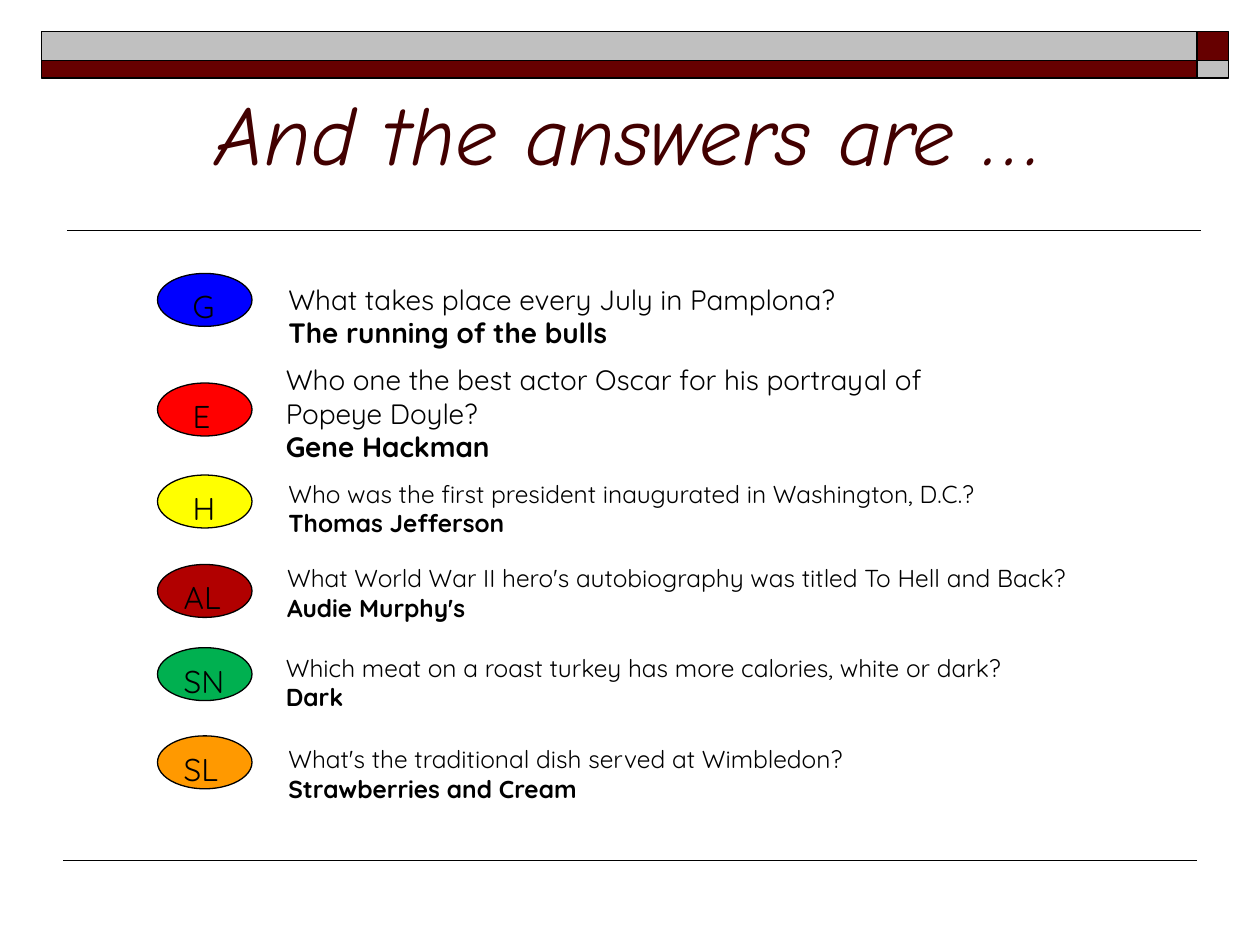
from typing import NamedTuple

from lxml.etree import SubElement
from pptx import Presentation
from pptx.dml.color import RGBColor
from pptx.enum.shapes import MSO_CONNECTOR as Link, MSO_SHAPE as Kind
from pptx.enum.text import MSO_ANCHOR as Anchor, MSO_AUTO_SIZE as Fit, PP_ALIGN as Align
from pptx.oxml.ns import qn
from pptx.util import Inches, Pt

BLACK = RGBColor(0, 0, 0)
WINE = RGBColor(0x66, 0, 0)
GRAY = RGBColor(0xC0, 0xC0, 0xC0)
DARK = RGBColor(0x42, 0, 0)
BLUE = RGBColor(0, 0, 0xFF)
RED = RGBColor(0xFF, 0, 0)
YELLOW = RGBColor(0xFF, 0xFF, 0)
BRICK = RGBColor(0xB1, 0, 0)
GREEN = RGBColor(0, 0xB0, 0x50)
ORANGE = RGBColor(0xFF, 0x99, 0)
FONT = "Quicksand"


class Box(NamedTuple):
    left: float
    top: float
    width: float
    height: float


class Entry(NamedTuple):
    tag: str
    fill: RGBColor
    top: float
    box: Box
    size: int
    ask: str
    answer: str


BARS = [
    (Box(9.5, 0.25, 0.25, 0.23), WINE),
    (Box(0.33, 0.25, 9.17, 0.23), GRAY),
    (Box(0.33, 0.48, 9.17, 0.14), WINE),
    (Box(9.5, 0.48, 0.25, 0.14), GRAY),
]

ENTRIES = [
    Entry("G", BLUE, 2.17, Box(2.19, 2.19, 6.17, 0.64), 16,
          "What takes place every July in Pamplona?", "The running of the bulls"),
    Entry("E", RED, 3.04, Box(2.17, 2.83, 5.58, 0.91), 16,
          "Who one the best actor Oscar for his portrayal of Popeye Doyle?", "Gene Hackman"),
    Entry("H", YELLOW, 3.77, Box(2.19, 3.75, 6.17, 0.57), 14,
          "Who was the first president inaugurated in Washington, D.C.?", "Thomas Jefferson"),
    Entry("AL", BRICK, 4.48, Box(2.18, 4.42, 7.08, 0.57), 14,
          "What World War II hero's autobiography was titled To Hell and Back?", "Audie Murphy's"),
    Entry("SN", GREEN, 5.14, Box(2.17, 5.13, 6.75, 0.57), 14,
          "Which meat on a roast turkey has more calories, white or dark?", "Dark"),
    Entry("SL", ORANGE, 5.84, Box(2.19, 5.86, 7.17, 0.57), 14,
          "What's the traditional dish served at Wimbledon?", "Strawberries and Cream"),
]


def place(box: Box) -> list[int]:
    return [Inches(side) for side in box]


def style(para, size: int, color: RGBColor = BLACK, name: str = FONT) -> None:
    font = para.font
    font.size, font.name, font.color.rgb = Pt(size), name, color


def shape(slide, kind: Kind, box: Box, fill: RGBColor, weight: float):
    item = slide.shapes.add_shape(kind, *place(box))
    item.shadow.inherit = False
    item.fill.solid()
    item.fill.fore_color.rgb = fill
    item.line.color.rgb = BLACK
    item.line.width = Pt(weight)
    return item


def rule(slide, left: float, right: float, top: float, weight: float) -> None:
    line = slide.shapes.add_connector(
        Link.STRAIGHT, Inches(left), Inches(top), Inches(right), Inches(top))
    line.line.color.rgb = BLACK
    line.line.width = Pt(weight)
    SubElement(line._element.spPr, qn("a:effectLst"))


def head(slide) -> None:
    title = slide.shapes.title
    title.left, title.top, title.width, title.height = place(Box(0.5, 0.25, 9, 1.25))
    frame = title.text_frame
    frame.text = "And the answers are …"
    frame.vertical_anchor = Anchor.BOTTOM
    frame.auto_size = Fit.NONE
    para = frame.paragraphs[0]
    para.alignment = Align.CENTER
    style(para, 48, DARK, "Comic Neue")
    para.font.italic = True


def badge(slide, entry: Entry) -> None:
    oval = shape(slide, Kind.OVAL, Box(1.25, entry.top, 0.75, 0.42), entry.fill, 0.75)
    frame = oval.text_frame
    frame.text = entry.tag
    frame.vertical_anchor = Anchor.TOP
    frame.margin_left = Inches(0.17 if len(entry.tag) == 1 else 0.1)
    frame.margin_right = 0
    para = frame.paragraphs[0]
    para.alignment = Align.LEFT
    style(para, 18)


def quiz(slide, entry: Entry) -> None:
    frame = slide.shapes.add_textbox(*place(entry.box)).text_frame
    frame.word_wrap = True
    frame.auto_size = Fit.SHAPE_TO_FIT_TEXT
    frame.text = f"{entry.ask}\n{entry.answer}"
    for para in frame.paragraphs:
        style(para, entry.size)
    frame.paragraphs[1].font.bold = True


def main() -> None:
    deck = Presentation()
    deck.slide_width, deck.slide_height = Inches(10), Inches(7.5)
    slide = deck.slides.add_slide(deck.slide_layouts[5])
    rule(slide, 0.53, 9.53, 1.83, 1)
    for box, fill in BARS:
        shape(slide, Kind.RECTANGLE, box, fill, 1)
    rule(slide, 0.5, 9.5, 6.83, 0.75)
    head(slide)
    for entry in ENTRIES:
        badge(slide, entry)
        quiz(slide, entry)
    deck.save("out.pptx")


if __name__ == "__main__":
    main()
